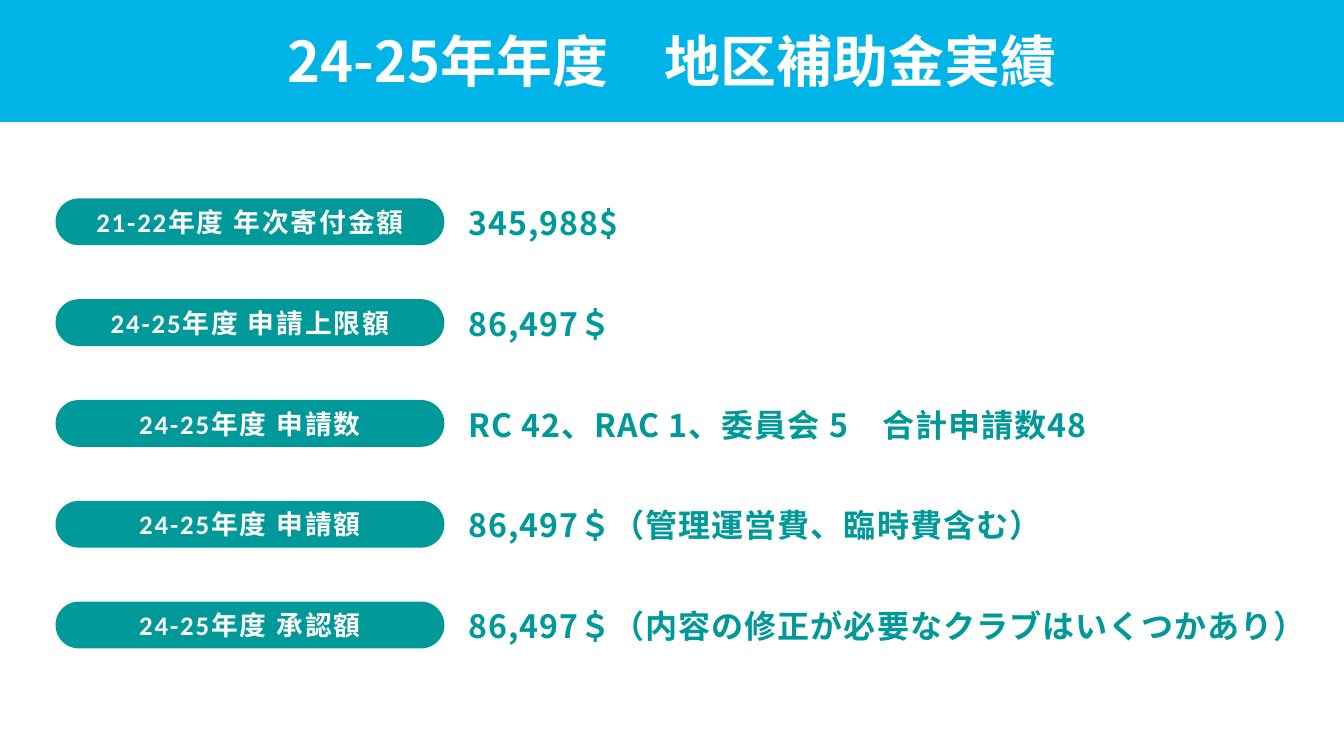
"""Build the slide of district grant results as five labelled figures."""
import dataclasses

import lxml.etree
import pptx
import pptx.dml.color
import pptx.enum.shapes
import pptx.enum.text
import pptx.oxml.ns
import pptx.util

Cm = pptx.util.Cm
Pt = pptx.util.Pt
RGB = pptx.dml.color.RGBColor
Align = pptx.enum.text.PP_ALIGN
Anchor = pptx.enum.text.MSO_ANCHOR


@dataclasses.dataclass(frozen=True)
class Theme:
    sky: RGB = RGB.from_string("01B4E7")
    teal: RGB = RGB.from_string("009999")
    white: RGB = RGB.from_string("FFFFFF")
    title_size: float = 40
    value_size: float = 22.9
    label_size: float = 19.1
    value_leading: float = 27.5
    japanese_font: str = "Noto Sans CJK JP"
    label_font: str = "Calibri"


theme = Theme()


def write(box, text, font, size, color, align, tracking=0):
    """Write one bold run into the box and return its paragraph."""
    box.text_frame.word_wrap = True
    para = box.text_frame.paragraphs[0]
    para.alignment = align
    span = para.add_run()
    span.text = text
    span.font.size = Pt(size)
    span.font.bold = True
    span.font.color.rgb = color
    span.font.name = font
    properties = span.font._element
    properties.set("spc", str(round(tracking * 100)))
    east_asian = lxml.etree.SubElement(properties, pptx.oxml.ns.qn("a:ea"))
    east_asian.set("typeface", theme.japanese_font)
    return para


deck = pptx.Presentation()
deck.slide_width = Cm(33.87)
deck.slide_height = Cm(19.05)
page = deck.slides.add_slide(deck.slide_layouts[5])

title = page.shapes.title
title.left, title.top = Cm(0), Cm(0)
title.width, title.height = deck.slide_width, Cm(3.05)
title.fill.solid()
title.fill.fore_color.rgb = theme.sky
title.line.color.rgb = theme.sky
title.line.width = Pt(1)
title.text_frame.vertical_anchor = Anchor.MIDDLE
write(title, "24-25年年度　地区補助金実績", theme.japanese_font,
      theme.title_size, theme.white, Align.CENTER)

results = [
    ("21-22年度 年次寄付金額", "345,988$"),
    ("24-25年度 申請上限額", "86,497＄"),
    ("24-25年度 申請数", "RC 42、RAC 1、委員会 5　合計申請数48"),
    ("24-25年度 申請額", "86,497＄（管理運営費、臨時費含む）"),
    ("24-25年度 承認額", "86,497＄（内容の修正が必要なクラブはいくつかあり）"),
]
first_top, row_pitch = 5, 2.54

for row, (label, amount) in enumerate(results):
    top = Cm(first_top + row * row_pitch)

    value = page.shapes.add_textbox(Cm(11.56), top, Cm(21.8), Cm(1.24))
    value.text_frame.auto_size = pptx.enum.text.MSO_AUTO_SIZE.SHAPE_TO_FIT_TEXT
    para = write(value, amount, theme.japanese_font, theme.value_size,
                 theme.teal, Align.JUSTIFY, tracking=0.7)
    para.line_spacing = Pt(theme.value_leading)

    pill = page.shapes.add_shape(
        pptx.enum.shapes.MSO_SHAPE.ROUNDED_RECTANGLE,
        Cm(1.4), top, Cm(9.8), Cm(1.18))
    pill.adjustments[0] = 0.5
    pill.shadow.inherit = False
    pill.fill.solid()
    pill.fill.fore_color.rgb = theme.teal
    pill.line.fill.background()
    pill.text_frame.vertical_anchor = Anchor.MIDDLE
    write(pill, label, theme.label_font, theme.label_size,
          theme.white, Align.CENTER, tracking=1.4)

deck.save("out.pptx")
